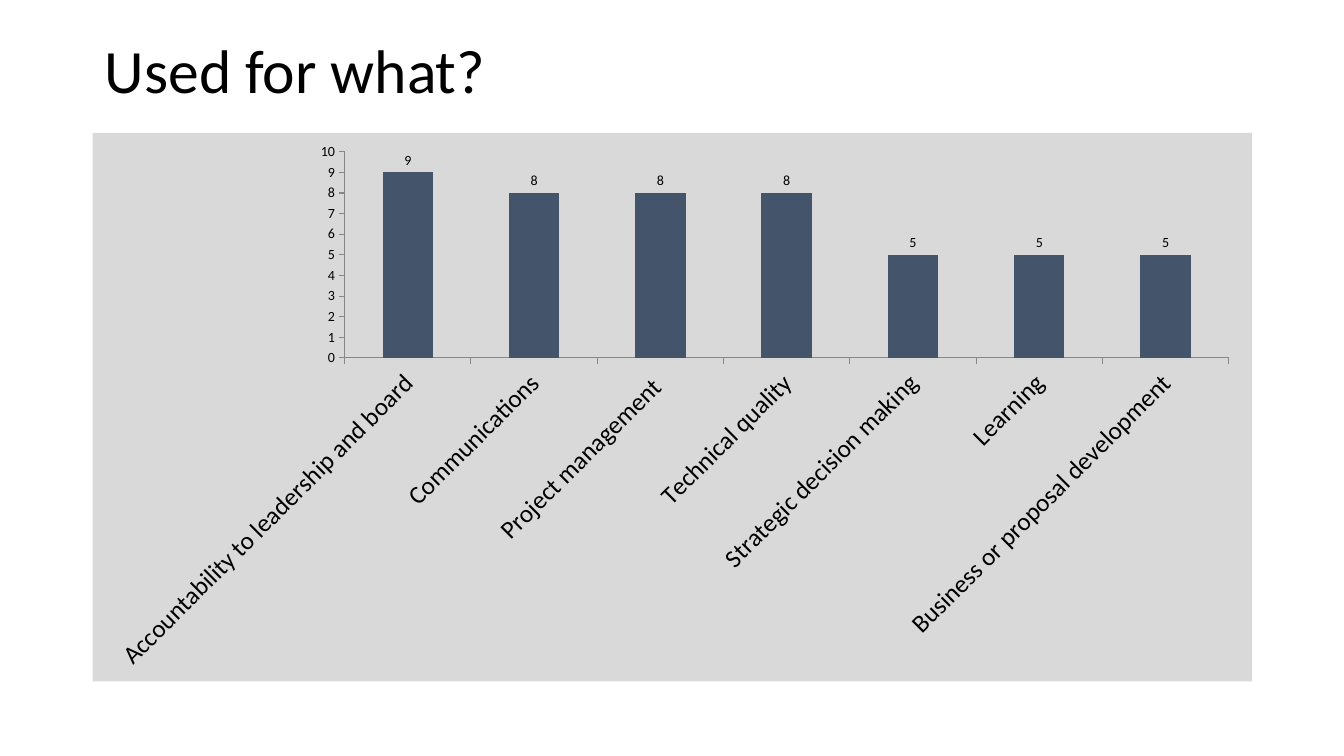
from dataclasses import dataclass

from lxml import etree
from pptx import Presentation
from pptx.chart.chart import Chart
from pptx.chart.data import CategoryChartData
from pptx.dml.color import RGBColor
from pptx.enum.chart import XL_CHART_TYPE, XL_LABEL_POSITION, XL_TICK_MARK
from pptx.enum.text import MSO_ANCHOR, PP_ALIGN
from pptx.oxml import parse_xml
from pptx.oxml.ns import nsdecls
from pptx.slide import Slide
from pptx.util import Pt

COLUMNS = XL_CHART_TYPE.COLUMN_CLUSTERED
ABOVE_BAR = XL_LABEL_POSITION.OUTSIDE_END
TICK_OUT = XL_TICK_MARK.OUTSIDE
TICK_NONE = XL_TICK_MARK.NONE
LEFT = PP_ALIGN.LEFT
MIDDLE = MSO_ANCHOR.MIDDLE

FONT = "Calibri"
COLORS = {"text": "000000", "bar": "44546A", "panel": "D9D9D9", "axis": "878787"}
TITLE_ONLY = 5
LABEL_ROTATION = -45 * 60000


@dataclass(frozen=True)
class Purpose:
    label: str
    count: int


PURPOSES = [
    Purpose("Accountability to leadership and board", 9),
    Purpose("Communications", 8),
    Purpose("Project management ", 8),
    Purpose("Technical quality", 8),
    Purpose("Strategic decision making", 5),
    Purpose("Learning", 5),
    Purpose("Business or proposal development", 5),
]


def color(name: str) -> RGBColor:
    return RGBColor.from_string(COLORS[name])


def add_title(slide: Slide, wording: str) -> None:
    title = slide.shapes.title
    title.left, title.top, title.width, title.height = Pt(67.7), Pt(0), Pt(828), Pt(104.4)
    frame = title.text_frame
    frame.text = wording
    frame.word_wrap = True
    frame.vertical_anchor = MIDDLE
    heading = frame.paragraphs[0]
    heading.alignment = LEFT
    heading.line_spacing = 0.9
    font = heading.runs[0].font
    font.name, font.size = FONT, Pt(44)
    font.color.rgb = color("text")


def panel_fill() -> etree._Element:
    return parse_xml(
        f'<c:spPr {nsdecls("c", "a")}><a:solidFill><a:srgbClr val="{COLORS["panel"]}"/>'
        "</a:solidFill><a:ln><a:noFill/></a:ln></c:spPr>"
    )


def style_axes(chart: Chart) -> None:
    for axis in (chart.category_axis, chart.value_axis):
        axis.has_major_gridlines = False
        axis.major_tick_mark = TICK_OUT
        axis.minor_tick_mark = TICK_NONE
        axis.format.line.color.rgb = color("axis")
        axis.format.line.width = Pt(0.75)
    chart.value_axis.minimum_scale = 0
    chart.value_axis.maximum_scale = 10
    chart.value_axis.major_unit = 1
    chart.category_axis.tick_labels.font.size = Pt(18)
    label_body = chart.element.xpath(".//c:catAx/c:txPr/a:bodyPr")[0]
    label_body.set("rot", str(LABEL_ROTATION))
    label_body.set("vert", "horz")


def add_purpose_chart(slide: Slide, purposes: list[Purpose]) -> None:
    data = CategoryChartData()
    data.categories = [purpose.label for purpose in purposes]
    data.add_series("Series 1", [purpose.count for purpose in purposes])
    chart = slide.shapes.add_chart(
        COLUMNS, Pt(66.2), Pt(95), Pt(828), Pt(391.7), data
    ).chart
    chart.has_title = False
    chart.has_legend = False
    chart.font.name, chart.font.size = FONT, Pt(10)
    chart.font.color.rgb = color("text")
    style_axes(chart)

    plot = chart.plots[0]
    plot.gap_width = 150
    plot.vary_by_categories = False
    bars = plot.series[0]
    bars.format.fill.solid()
    bars.format.fill.fore_color.rgb = color("bar")
    bars.data_labels.show_value = True
    bars.data_labels.position = ABOVE_BAR

    chart.element.xpath("c:chart/c:plotArea")[0].append(panel_fill())
    chart.element.xpath("c:chart")[0].addnext(panel_fill())


def main() -> None:
    deck = Presentation()
    deck.slide_width, deck.slide_height = Pt(960), Pt(540)
    slide = deck.slides.add_slide(deck.slide_layouts[TITLE_ONLY])
    add_title(slide, "Used for what?")
    add_purpose_chart(slide, PURPOSES)
    deck.save("out.pptx")


if __name__ == "__main__":
    main()
